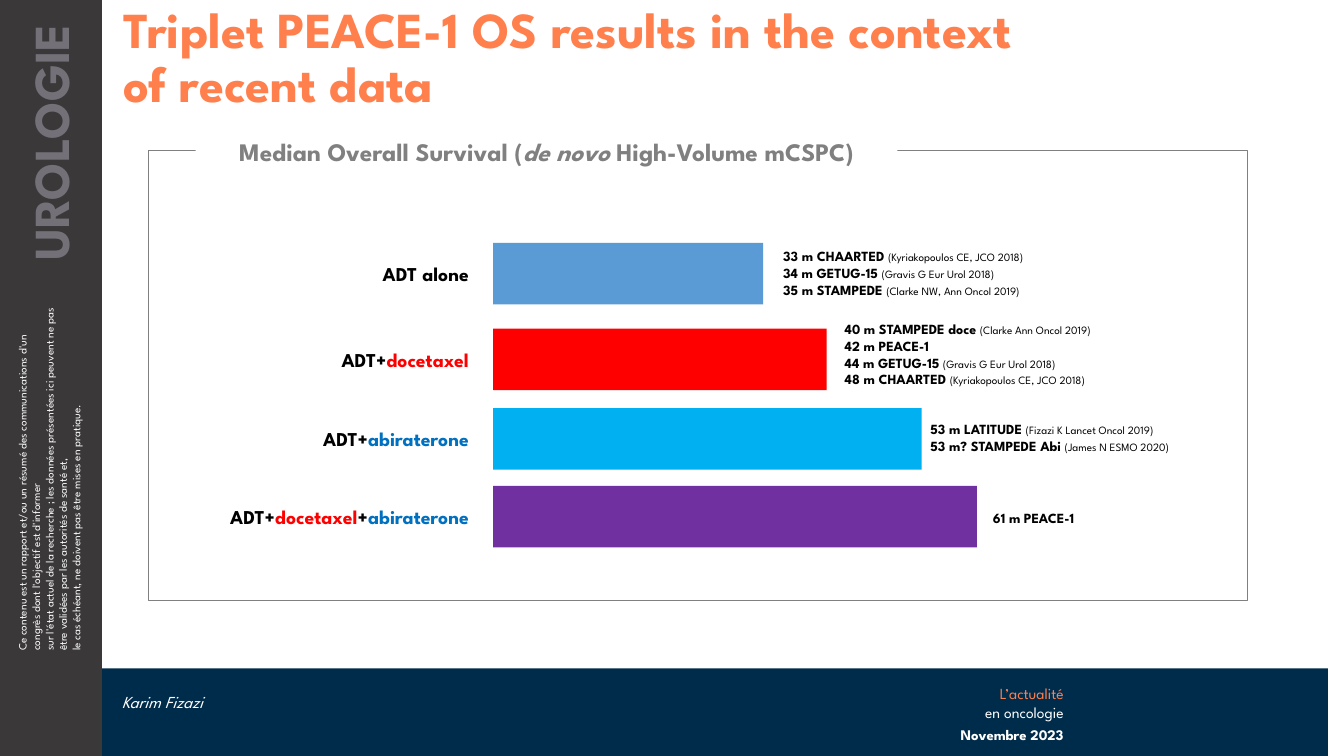
import dataclasses

import pptx
import pptx.dml.color
import pptx.enum.shapes
import pptx.enum.text
import pptx.util

ALIGN = pptx.enum.text.PP_ALIGN
ANCHOR = pptx.enum.text.MSO_ANCHOR
CELLS_PER_INCH = 10
COLUMNS, ROWS = 133.3, 75


@dataclasses.dataclass(frozen=True)
class Theme:
    """Colours, typeface and type sizes of the slide."""
    font: str = "League Spartan"
    white: str = "FFFFFF"
    black: str = "000000"
    orange: str = "FF7F4D"
    navy: str = "002C4C"
    charcoal: str = "3A3839"
    section: str = "737078"
    grey: str = "808080"
    docetaxel: str = "FF0000"
    abiraterone: str = "0070C0"
    adt_bar: str = "5B9BD5"
    abiraterone_bar: str = "00B0F0"
    triplet_bar: str = "7030A0"
    title: float = 36
    heading: float = 18
    label: float = 14
    author: float = 12
    series: float = 11
    date: float = 10.5
    trial: float = 10
    small: float = 8


THEME = Theme()
BAR_LEFT, BAR_HEIGHT = 48.9, 6.1
DOCETAXEL = ("docetaxel", {"color": THEME.docetaxel})
ABIRATERONE = ("abiraterone", {"color": THEME.abiraterone})

TREATMENTS = [
    (24.1, 26.8, THEME.adt_bar, [("ADT alone", {})], (76.7, 24.1), [
        ("33 m CHAARTED", "(Kyriakopoulos CE, JCO 2018)"),
        ("34 m GETUG-15", "(Gravis G Eur Urol 2018)"),
        ("35 m STAMPEDE", "(Clarke NW, Ann Oncol 2019)")]),
    (32.6, 33.1, THEME.docetaxel, [("ADT+", {}), DOCETAXEL], (82.8, 31.3), [
        ("40 m STAMPEDE doce", "(Clarke Ann Oncol 2019)"),
        ("42 m PEACE-1", ""),
        ("44 m GETUG-15", "(Gravis G Eur Urol 2018)"),
        ("48 m CHAARTED", "(Kyriakopoulos CE, JCO 2018)")]),
    (40.5, 42.5, THEME.abiraterone_bar, [("ADT+", {}), ABIRATERONE], (91.3, 41.2), [
        ("53 m LATITUDE", "(Fizazi K Lancet Oncol 2019)"),
        ("53 m? STAMPEDE Abi", "(James N ESMO 2020)")]),
    (48.2, 48, THEME.triplet_bar,
     [("ADT+", {}), DOCETAXEL, ("+", {}), ABIRATERONE], (97.5, 50.1),
     [("61 m PEACE-1", "")]),
]


def cells(count):
    """Turn a number of grid cells into a length."""
    return pptx.util.Inches(count / CELLS_PER_INCH)


def style_font(font, size=None, color=None, bold=None, italic=None):
    """Set the given properties of a font."""
    if size:
        font.size = pptx.util.Pt(size)
    if color:
        font.color.rgb = pptx.dml.color.RGBColor.from_string(color)
    if bold is not None:
        font.bold = bold
    if italic is not None:
        font.italic = italic


def write(shape, paragraphs, align=ALIGN.LEFT, spacing=None, **style):
    """Fill a shape with paragraphs made of (text, run style) pairs."""
    frame = shape.text_frame
    frame.word_wrap = True
    for index, runs in enumerate(paragraphs):
        paragraph = frame.add_paragraph() if index else frame.paragraphs[0]
        paragraph.alignment = align
        if spacing:
            paragraph.line_spacing = spacing
        paragraph.font.name = THEME.font
        style_font(paragraph.font, **style)
        for text, run_style in runs:
            for number, line in enumerate(text.split("\n")):
                if number:
                    paragraph.add_line_break()
                if line:
                    run = paragraph.add_run()
                    run.text = line
                    style_font(run.font, **run_style)


def add_text(slide, box, paragraphs, rotation=0, anchor=ANCHOR.TOP,
             left_inset=1, right_inset=1, **style):
    """Add a text box at a grid position."""
    shape = slide.shapes.add_textbox(*map(cells, box))
    shape.rotation = rotation
    frame = shape.text_frame
    frame.vertical_anchor = anchor
    frame.margin_left, frame.margin_right = cells(left_inset), cells(right_inset)
    write(shape, paragraphs, **style)


def add_rectangle(slide, box, fill=None, line=None):
    """Add a flat rectangle at a grid position."""
    shape = slide.shapes.add_shape(
        pptx.enum.shapes.MSO_SHAPE.RECTANGLE, *map(cells, box))
    shape.shadow.inherit = False
    if fill:
        shape.fill.solid()
        shape.fill.fore_color.rgb = pptx.dml.color.RGBColor.from_string(fill)
    else:
        shape.fill.background()
    if line:
        shape.line.color.rgb = pptx.dml.color.RGBColor.from_string(line)
        shape.line.width = pptx.util.Pt(0.75)
    else:
        shape.line.fill.background()
    return shape


def trial_runs(trial, citation):
    """Return a bold trial result followed by its small citation."""
    if not citation:
        return [(trial, {})]
    return [(trial + " ", {}), (citation, {"size": THEME.small, "bold": False})]


def add_treatment(slide, top, length, color, label, note_at, trials):
    """Add one survival bar with its label and trial results."""
    add_text(slide, (18.5, top + 1.4, 29, 3.4), [label], align=ALIGN.RIGHT,
             size=THEME.label, color=THEME.black, bold=True)
    add_rectangle(slide, (BAR_LEFT, top, length, BAR_HEIGHT), color)
    add_text(slide, (*note_at, 31, 1.7 * len(trials) + 1),
             [trial_runs(*entry) for entry in trials],
             size=THEME.trial, color=THEME.black, bold=True)


def add_side_band(slide):
    """Add the dark band with the section name and the disclaimer."""
    add_rectangle(slide, (0, 0, 10.1, ROWS), THEME.charcoal)
    disclaimer = (
        "Ce contenu est un rapport et/ou un résumé des communications d'un "
        "congrès dont l'objectif est d'informer\n"
        "sur l'état actuel de la recherche ; les données présentées ici peuvent "
        "ne pas être validées par les autorités de santé et,\n"
        "le cas échéant, ne doivent pas être mises en pratique.")
    add_text(slide, (-13.1, 43.7, 36, 7.7), [[(disclaimer, {})]], rotation=270,
             size=THEME.small, color=THEME.white)
    add_text(slide, (-10.4, 11.8, 30.7, 7.1), [[("UROLOGIE", {})]], rotation=270,
             right_inset=2.4, align=ALIGN.RIGHT, size=THEME.title,
             color=THEME.section, bold=True)


def add_footer(slide):
    """Add the footer band with the author, series and date."""
    add_rectangle(slide, (8.5, 66.3, 123.2, 8.7), THEME.navy)
    add_text(slide, (11.1, 66.3, 56.4, 6.9), [[("Karim Fizazi", {})]],
             anchor=ANCHOR.MIDDLE, spacing=0.9, size=THEME.author,
             color=THEME.white, italic=True)
    add_text(slide, (90.1, 67.4, 16.4, 4.7),
             [[("L’actualité\n", {"color": THEME.orange}), ("en oncologie", {})]],
             align=ALIGN.RIGHT, size=THEME.series, color=THEME.white)
    add_text(slide, (90.1, 71.7, 15.4, 2.7), [[("Novembre 2023", {})]],
             right_inset=0, align=ALIGN.RIGHT, spacing=0.9, size=THEME.date,
             color=THEME.white, bold=True)


def add_survival_frame(slide):
    """Add the outline and the heading that interrupts its top edge."""
    add_rectangle(slide, (14.7, 14.9, 109, 44.7), line=THEME.grey)
    heading = add_rectangle(slide, (19.4, 13, 69.6, 4), THEME.white)
    heading.text_frame.vertical_anchor = ANCHOR.TOP
    write(heading, [[("Median Overall Survival (", {}),
                     ("de novo ", {"italic": True}),
                     ("High-Volume mCSPC)", {})]],
          align=ALIGN.CENTER, size=THEME.heading, color=THEME.grey, bold=True)


def main():
    """Build and save the slide."""
    presentation = pptx.Presentation()
    presentation.slide_width, presentation.slide_height = cells(COLUMNS), cells(ROWS)
    slide = presentation.slides.add_slide(presentation.slide_layouts[6])
    add_footer(slide)
    add_side_band(slide)
    add_text(slide, (10.2, 0, 123.1, 5.7),
             [[("Triplet PEACE-1 OS results in the context\nof recent data", {})]],
             left_inset=2, spacing=0.9, size=THEME.title, color=THEME.orange,
             bold=True)
    add_survival_frame(slide)
    for treatment in TREATMENTS:
        add_treatment(slide, *treatment)
    presentation.save("out.pptx")


if __name__ == "__main__":
    main()
